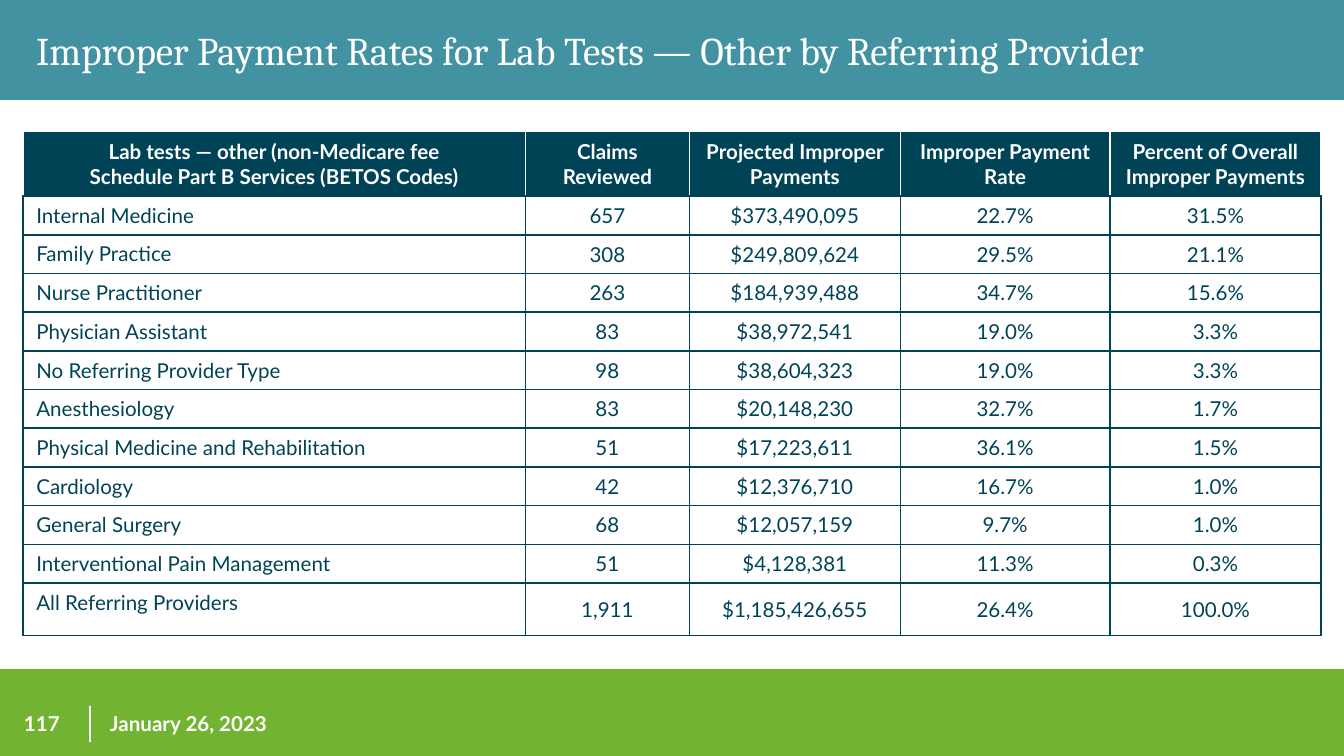
from dataclasses import dataclass

from lxml.etree import SubElement
from pptx import Presentation
from pptx.dml.color import RGBColor
from pptx.enum.shapes import MSO_CONNECTOR, MSO_SHAPE
from pptx.enum.text import MSO_ANCHOR, PP_ALIGN
from pptx.oxml.ns import qn
from pptx.util import Inches, Pt


@dataclass(frozen=True)
class Theme:
    white: str = "FFFFFF"
    navy: str = "004357"
    teal: str = "4392A2"
    green: str = "72B431"
    heading_font: str = "Cambria"
    body_font: str = "Lato"
    title_size: int = 21
    body_size: int = 11


SLIDE_WIDTH = 10
SLIDE_HEIGHT = SLIDE_WIDTH * 9 / 16
HEADERS = [
    "Lab tests — other (non-Medicare fee\nSchedule Part B Services (BETOS Codes)",
    "Claims\nReviewed",
    "Projected Improper Payments",
    "Improper Payment Rate",
    "Percent of Overall Improper Payments",
]
ROWS = [
    ["Internal Medicine", "657", "$373,490,095", "22.7%", "31.5%"],
    ["Family Practice", "308", "$249,809,624", "29.5%", "21.1%"],
    ["Nurse Practitioner", "263", "$184,939,488", "34.7%", "15.6%"],
    ["Physician Assistant", "83", "$38,972,541", "19.0%", "3.3%"],
    ["No Referring Provider Type", "98", "$38,604,323", "19.0%", "3.3%"],
    ["Anesthesiology", "83", "$20,148,230", "32.7%", "1.7%"],
    ["Physical Medicine and Rehabilitation", "51", "$17,223,611", "36.1%", "1.5%"],
    ["Cardiology", "42", "$12,376,710", "16.7%", "1.0%"],
    ["General Surgery", "68", "$12,057,159", "9.7%", "1.0%"],
    ["Interventional Pain Management", "51", "$4,128,381", "11.3%", "0.3%"],
    ["All Referring Providers", "1,911", "$1,185,426,655", "26.4%", "100.0%"],
]
COL_WIDTHS = [3.74, 1.22, 1.57, 1.56, 1.57]
HEADER_HEIGHT, TOTAL_HEIGHT, DETAIL_HEIGHT = 0.48, 0.39, 2.88


def write_text(tf, text, *, font, size, color, bold=False, align=PP_ALIGN.LEFT):
    for i, line in enumerate(text.split("\n")):
        p = tf.paragraphs[0] if i == 0 else tf.add_paragraph()
        p.alignment = align
        r = p.add_run()
        r.text = line
        r.font.name = font
        r.font.size = Pt(size)
        r.font.bold = bold
        r.font.color.rgb = RGBColor.from_string(color)


class SlideBuilder:
    def __init__(self, slide, theme):
        self.s = slide
        self.theme = theme

    def band(self, x, y, w, h, color):
        sp = self.s.shapes.add_shape(
            MSO_SHAPE.RECTANGLE, Inches(x), Inches(y), Inches(w), Inches(h))
        sp.shadow.inherit = False
        sp.fill.solid()
        sp.fill.fore_color.rgb = RGBColor.from_string(color)
        sp.line.fill.background()
        return sp

    def line(self, x1, y1, x2, y2, color, width=1):
        cxn = self.s.shapes.add_connector(
            MSO_CONNECTOR.STRAIGHT, Inches(x1), Inches(y1), Inches(x2), Inches(y2))
        cxn.line.color.rgb = RGBColor.from_string(color)
        cxn.line.width = Pt(width)
        SubElement(cxn._element.spPr, qn("a:effectLst"))

    def text(self, x, y, w, h, text, **style):
        tf = self.s.shapes.add_textbox(
            Inches(x), Inches(y), Inches(w), Inches(h)).text_frame
        tf.word_wrap = True
        tf.vertical_anchor = MSO_ANCHOR.MIDDLE
        write_text(tf, text, **style)

    def borders(self, cell, colors, width=1):
        tcPr = cell._tc.get_or_add_tcPr()
        for i, (side, color) in enumerate(zip("LRTB", colors)):
            ln = tcPr.makeelement(qn(f"a:ln{side}"), {"w": str(Pt(width))})
            fill = SubElement(ln, qn("a:solidFill"))
            SubElement(fill, qn("a:srgbClr"), val=color)
            tcPr.insert(i, ln)

    def table(self, x, y, widths, heights, rows):
        t = self.theme
        tbl = self.s.shapes.add_table(
            len(rows), len(widths), Inches(x), Inches(y),
            Inches(sum(widths)), Inches(sum(heights))).table
        for col, width in zip(tbl.columns, widths):
            col.width = Inches(width)
        for i, (row, height) in enumerate(zip(rows, heights)):
            tbl.rows[i].height = Inches(height)
            header = i == 0
            for j, value in enumerate(row):
                cell = tbl.cell(i, j)
                label = j == 0 and not header
                cell.fill.solid()
                cell.fill.fore_color.rgb = RGBColor.from_string(
                    t.navy if header else t.white)
                cell.vertical_anchor = MSO_ANCHOR.TOP if label else MSO_ANCHOR.MIDDLE
                write_text(cell.text_frame, value, font=t.body_font, size=t.body_size,
                           color=t.white if header else t.navy, bold=header,
                           align=PP_ALIGN.LEFT if label else PP_ALIGN.CENTER)
                edge = t.white if header else t.navy
                self.borders(cell, [edge, edge, edge, t.navy])


def main():
    prs = Presentation()
    prs.slide_width, prs.slide_height = Inches(SLIDE_WIDTH), Inches(SLIDE_HEIGHT)
    theme = Theme()
    b = SlideBuilder(prs.slides.add_slide(prs.slide_layouts[6]), theme)

    b.band(0, 4.98, SLIDE_WIDTH, SLIDE_HEIGHT - 4.98, theme.green)
    title_band = b.band(0, 0, SLIDE_WIDTH, 0.73, theme.teal)
    title_band.line.color.rgb = RGBColor.from_string(theme.teal)
    title_band.line.width = Pt(2)

    footer = dict(font=theme.body_font, size=theme.body_size,
                  color=theme.white, bold=True)
    b.line(0.67, 5.25, 0.67, 5.52, theme.white)
    b.text(0.08, 5.25, 0.61, 0.27, "117", **footer)
    b.text(0.72, 5.25, 2, 0.27, "January 26, 2023", **footer)

    b.text(0.17, -0.15, 9.67, 1.04,
           "Improper Payment Rates for Lab Tests — Other by Referring Provider",
           font=theme.heading_font, size=theme.title_size, color=theme.white)

    details = len(ROWS) - 1
    heights = [HEADER_HEIGHT] + [DETAIL_HEIGHT / details] * details + [TOTAL_HEIGHT]
    b.table(0.17, 0.98, COL_WIDTHS, heights, [HEADERS] + ROWS)

    prs.save("out.pptx")


if __name__ == "__main__":
    main()
